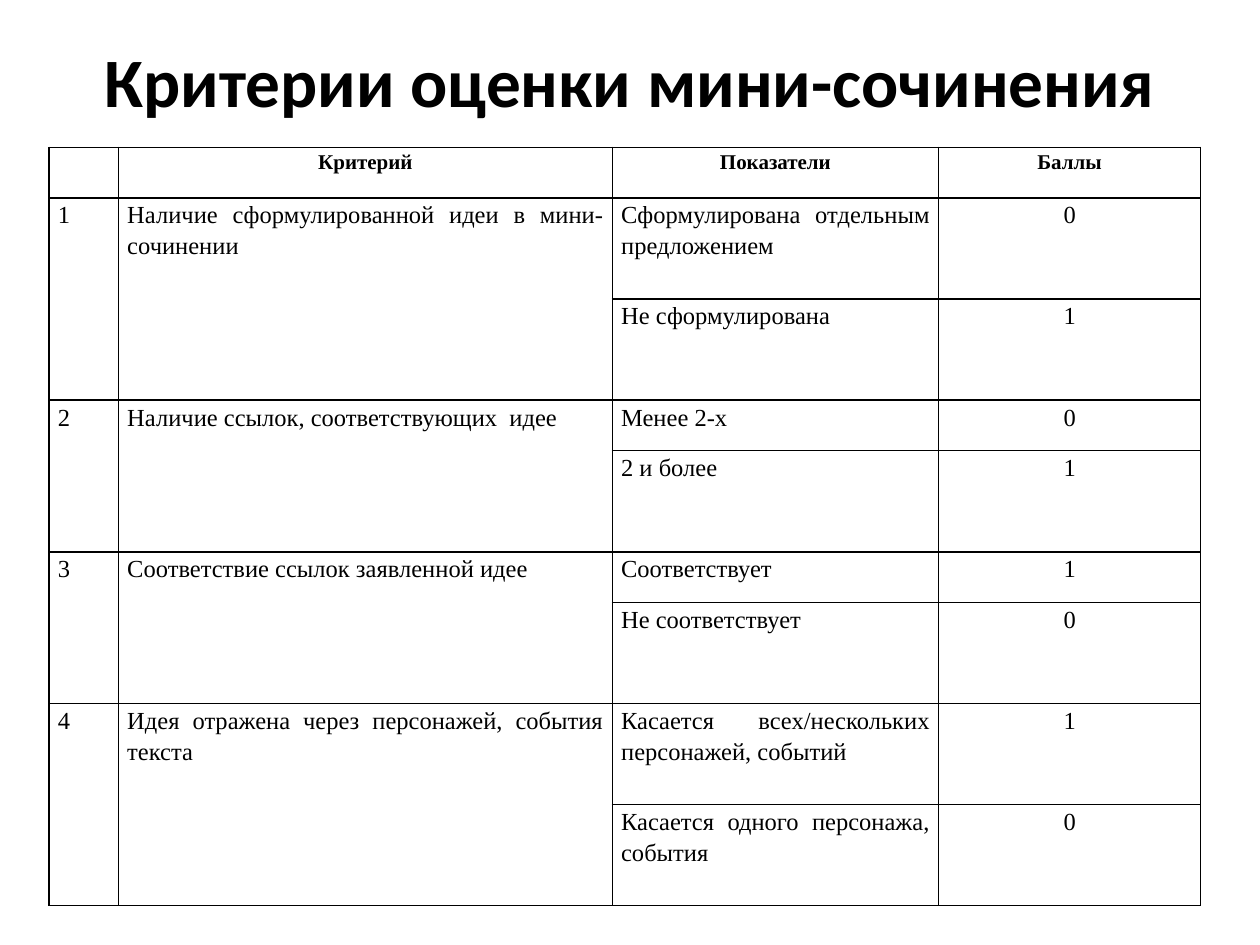
"""Builds a slide with the grading criteria of a mini-essay."""
from lxml.etree import SubElement
from pptx import Presentation
from pptx.dml.color import RGBColor
from pptx.enum.text import MSO_ANCHOR, PP_ALIGN as Align
from pptx.oxml.ns import qn
from pptx.util import Inches, Pt

BLACK = RGBColor(0, 0, 0)
TITLE = "Критерии оценки мини-сочинения"
HEADINGS = ["", "Критерий", "Показатели", "Баллы"]
CRITERIA = [
    ("Наличие сформулированной идеи в мини-сочинении",
     [("Сформулирована отдельным предложением", 0, 2), ("Не сформулирована", 1, 2)]),
    ("Наличие ссылок, соответствующих  идее",
     [("Менее 2-х", 0, 1), ("2 и более", 1, 2)]),
    ("Соответствие ссылок заявленной идее",
     [("Соответствует", 1, 1), ("Не соответствует", 0, 2)]),
    ("Идея отражена через персонажей, события текста",
     [("Касается всех/нескольких персонажей, событий", 1, 2),
      ("Касается одного персонажа, события", 0, 2)]),
]
COLUMN_WIDTHS = [0.55, 3.92, 2.59, 2.08]
TABLE_LEFT, TABLE_TOP, TABLE_HEIGHT = 0.39, 1.17, 6.02


def add_text(paragraph, text, font_name, size, bold, align):
    paragraph.alignment = align
    run = paragraph.add_run()
    run.text = text
    run.font.name, run.font.size, run.font.bold = font_name, Pt(size), bold
    run.font.color.rgb = BLACK


def style_cell(cell):
    cell.margin_left = cell.margin_right = Inches(0.07)
    cell.margin_top = cell.margin_bottom = 0
    properties = cell._tc.get_or_add_tcPr()
    for side in ("a:lnL", "a:lnR", "a:lnT", "a:lnB"):
        border = SubElement(properties, qn(side), w=str(Pt(1)))
        fill = SubElement(border, qn("a:solidFill"))
        SubElement(fill, qn("a:srgbClr"), val=str(BLACK))
    cell.fill.background()


def fill_cell(cell, text, size=14, bold=False, align=Align.JUSTIFY):
    paragraph = cell.text_frame.paragraphs[0]
    paragraph.line_spacing = 1.15
    if text:
        add_text(paragraph, text, "Times New Roman", size, bold, align)
    else:
        paragraph.font.size = Pt(size)


def add_title(slide):
    frame = slide.shapes.add_textbox(
        Inches(0.5), Inches(0.3), Inches(9), Inches(1.25)).text_frame
    frame.word_wrap = True
    frame.vertical_anchor = MSO_ANCHOR.TOP
    frame.margin_top = 0
    add_text(frame.paragraphs[0], TITLE, "Calibri", 39.6, True, Align.CENTER)


def add_criteria(slide):
    shares = [1] + [share for _, levels in CRITERIA for _, _, share in levels]
    table = slide.shapes.add_table(
        len(shares), len(HEADINGS), Inches(TABLE_LEFT), Inches(TABLE_TOP),
        Inches(sum(COLUMN_WIDTHS)), Inches(TABLE_HEIGHT)).table
    table.first_row = table.horz_banding = False
    for column, width in zip(table.columns, COLUMN_WIDTHS):
        column.width = Inches(width)
    for row, share in zip(table.rows, shares):
        row.height = Inches(TABLE_HEIGHT * share / sum(shares))
    for cell in table.iter_cells():
        style_cell(cell)
    for column, heading in enumerate(HEADINGS):
        fill_cell(table.cell(0, column), heading, 12, True, Align.CENTER)

    first = 1
    for number, (criterion, levels) in enumerate(CRITERIA, 1):
        last = first + len(levels) - 1
        for column, text in enumerate((str(number), criterion)):
            table.cell(first, column).merge(table.cell(last, column))
            fill_cell(table.cell(first, column), text)
        for row, (indicator, points, _) in enumerate(levels, first):
            fill_cell(table.cell(row, 2), indicator)
            fill_cell(table.cell(row, 3), str(points), align=Align.CENTER)
        first = last + 1


def main():
    deck = Presentation()
    deck.slide_width, deck.slide_height = Inches(10), Inches(7.5)
    slide = deck.slides.add_slide(deck.slide_layouts[6])
    add_title(slide)
    add_criteria(slide)
    deck.save("out.pptx")


if __name__ == "__main__":
    main()
